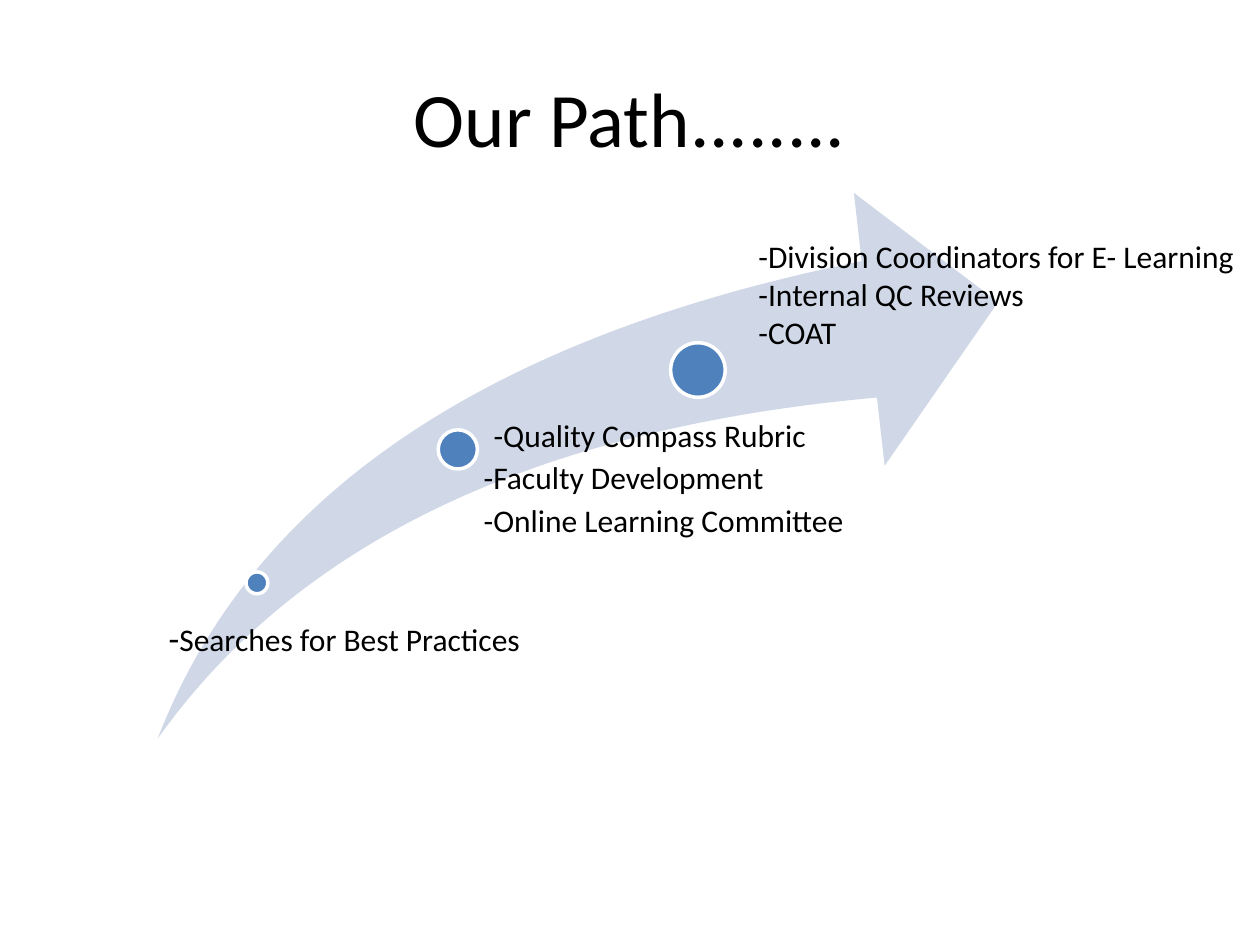
"""Build the "Our Path" slide: a rising arrow with three milestones."""
import pptx
import pptx.dml.color
import pptx.enum.shapes
import pptx.enum.text
import pptx.util

Cm, Pt = pptx.util.Cm, pptx.util.Pt
SHAPES = pptx.enum.shapes.MSO_SHAPE
COLOURS = {"text": "000000", "arrow": "D0D8E8", "milestone": "4F81BD", "outline": "FFFFFF"}


class PathSlide:
    """Hold the style and the current slide."""

    font = "Calibri"
    body_size = 18

    def __init__(self, deck):
        """Add a title-only slide to the deck."""
        self.slide = deck.slides.add_slide(deck.slide_layouts[5])

    def colour(self, name):
        """Return a named colour."""
        return pptx.dml.color.RGBColor.from_string(COLOURS[name])

    def format_runs(self, paragraph, size):
        """Apply the text style to every run of a paragraph."""
        for run in paragraph.runs:
            run.font.name = self.font
            run.font.size = Pt(size)
            run.font.color.rgb = self.colour("text")

    def title(self, wording, left, top, width, height):
        """Fill and place the title placeholder."""
        heading = self.slide.shapes.title
        heading.left, heading.top = Cm(left), Cm(top)
        heading.width, heading.height = Cm(width), Cm(height)
        heading.text_frame.text = wording
        heading.text_frame.vertical_anchor = pptx.enum.text.MSO_ANCHOR.MIDDLE
        paragraph = heading.text_frame.paragraphs[0]
        paragraph.alignment = pptx.enum.text.PP_ALIGN.CENTER
        self.format_runs(paragraph, 44)

    def shape(self, kind, fill, left, top, width, height):
        """Add a filled preset shape without outline or shadow."""
        shape = self.slide.shapes.add_shape(kind, Cm(left), Cm(top), Cm(width), Cm(height))
        shape.shadow.inherit = False
        shape.fill.solid()
        shape.fill.fore_color.rgb = self.colour(fill)
        shape.line.fill.background()
        return shape

    def arrow(self, left, top, width, height):
        """Add the rising swoosh arrow."""
        swoosh = self.shape(SHAPES.SWOOSH_ARROW, "arrow", left, top, width, height)
        swoosh.adjustments[0] = 0.25
        swoosh.adjustments[1] = 0.25

    def milestone(self, centre_x, centre_y, diameter):
        """Add an outlined dot around a centre point."""
        radius = diameter / 2
        dot = self.shape(SHAPES.OVAL, "milestone", centre_x - radius, centre_y - radius,
                         diameter, diameter)
        dot.line.color.rgb = self.colour("outline")
        dot.line.width = Pt(2)

    def steps(self, lines, left, top, width, height, spacing=1.0, after=0):
        """Add a text box with one paragraph per step and return its paragraphs."""
        box = self.slide.shapes.add_textbox(Cm(left), Cm(top), Cm(width), Cm(height))
        frame = box.text_frame
        frame.word_wrap = True
        frame.margin_left = frame.margin_top = frame.margin_right = frame.margin_bottom = 0
        frame.text = "\n".join(lines)
        for paragraph in frame.paragraphs:
            paragraph.line_spacing = spacing
            paragraph.space_after = Pt(after)
            self.format_runs(paragraph, self.body_size)
        return frame.paragraphs


def main():
    """Build and save the slide."""
    deck = pptx.Presentation()
    deck.slide_width, deck.slide_height = Cm(25.4), Cm(19.05)
    path = PathSlide(deck)
    path.title("Our Path........", 1.27, 0.76, 22.86, 3.18)
    path.arrow(3.18, 3.89, 16.94, 11)
    for centre_x, centre_y, diameter in ((5.18, 11.75, 0.44), (9.23, 9.06, 0.79), (14.07, 7.46, 1.1)):
        path.milestone(centre_x, centre_y, diameter)

    search = path.steps(["-"], 3.4, 12.52, 9.3, 1, spacing=0.9)[0]
    search.add_run().text = "Searches for Best Practices"
    path.format_runs(search, path.body_size)
    search.runs[0].font.size = Pt(20)

    rubric = path.steps(["-Quality Compass Rubric", "-Faculty Development", "-Online Learning Committee"],
                        9.75, 8.51, 9.3, 2.8, spacing=Pt(18), after=6.3)[0]
    rubric._p.get_or_add_pPr().set("marL", str(Cm(0.2)))

    path.steps(["-Division Coordinators for E- Learning", "-Internal QC Reviews", "-COAT"],
               15.29, 4.78, 10, 2.35)
    deck.save("out.pptx")


if __name__ == "__main__":
    main()
